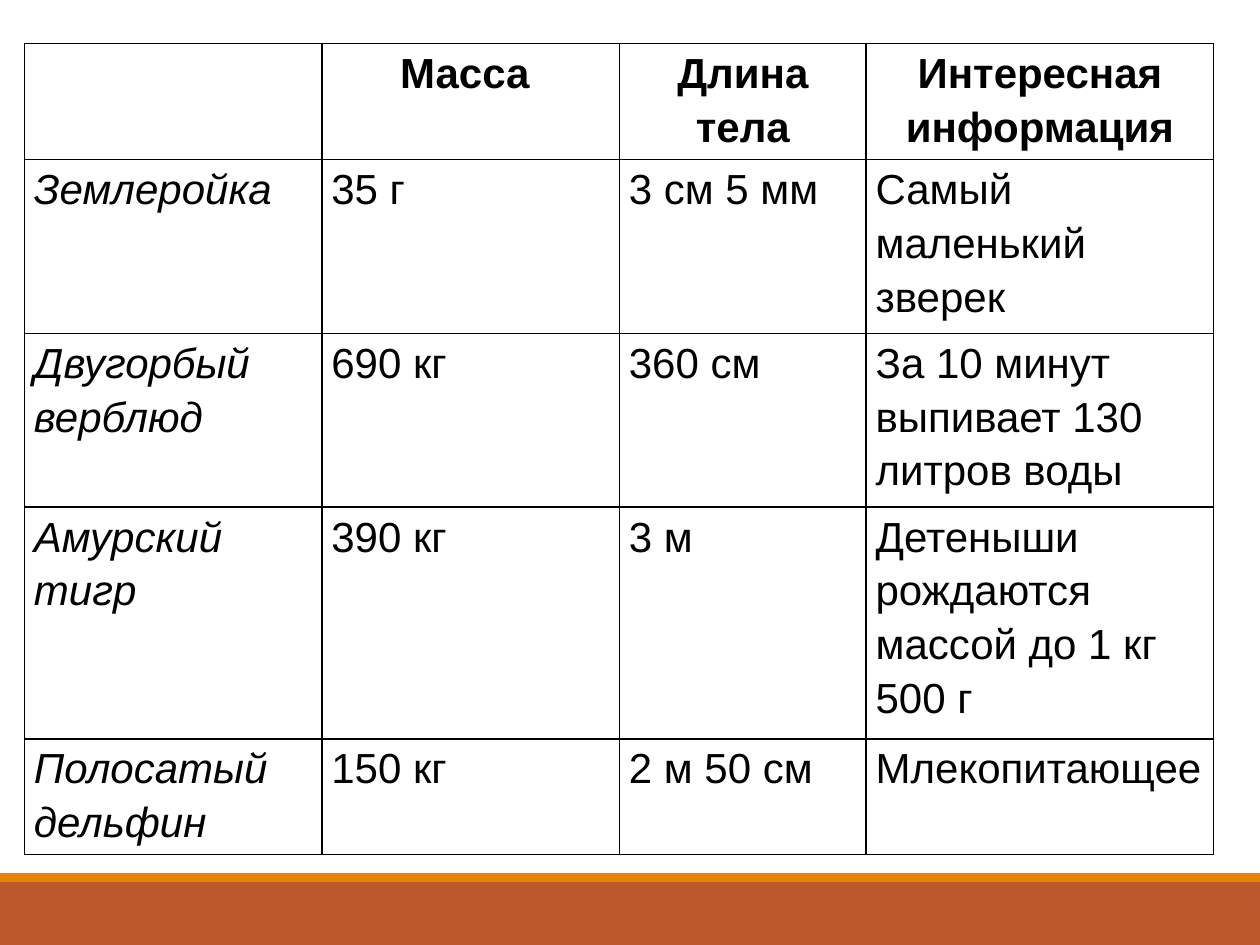
import pptx
import pptx.dml.color
import pptx.enum.shapes
import pptx.enum.text
import pptx.oxml
import pptx.oxml.ns
import pptx.util
from pptx.util import Pt

ALIGN = pptx.enum.text.PP_ALIGN

# Content
HEADER = ["", "Масса ", "Длина тела", "Интересная информация"]
ANIMALS = [
    ["Землеройка", "35 г", "3 см 5 мм", "Самый маленький зверек"],
    ["Двугорбый верблюд", "690 кг", "360 см", "За 10 минут выпивает 130 литров воды"],
    ["Амурский тигр", "390 кг", "3 м", "Детеныши рождаются массой до 1 кг 500 г"],
    ["Полосатый дельфин", "150 кг", "2 м 50 см", "Млекопитающее"],
]
COLUMN_WIDTHS = [170, 170, 141, 198.5]
COLUMN_ALIGN = [ALIGN.LEFT, ALIGN.JUSTIFY, ALIGN.JUSTIFY, ALIGN.LEFT]
ROW_LINES = [2, 3, 3, 4, 2]
LINE_HEIGHT = 33.1
TABLE_LEFT, TABLE_TOP = 14, 25
BANDS = [(504, 36, "BD582C"), (499, 5, "E48312")]  # top, height, colour
BLACK = "000000"


def rgb(colour):
    return pptx.dml.color.RGBColor.from_string(colour)


def add_borders(cell):
    properties = cell._tc.get_or_add_tcPr()
    for side in "LRTB":
        properties.append(pptx.oxml.parse_xml(
            f'<a:ln{side} {pptx.oxml.ns.nsdecls("a")} w="{Pt(1)}"><a:solidFill>'
            f'<a:srgbClr val="{BLACK}"/></a:solidFill></a:ln{side}>'))


def fill_cell(cell, text, row, column):
    add_borders(cell)
    cell.fill.background()
    cell.margin_left = cell.margin_right = Pt(5.4)
    cell.margin_top = cell.margin_bottom = Pt(0)
    cell.text = text
    paragraph = cell.text_frame.paragraphs[0]
    paragraph.alignment = ALIGN.CENTER if row == 0 else COLUMN_ALIGN[column]
    paragraph.line_spacing = 1.15
    font = paragraph.font
    font.name, font.size = "Arial", Pt(24)
    font.bold = row == 0
    font.italic = row > 0 and column == 0
    font.color.rgb = rgb(BLACK)


presentation = pptx.Presentation()
presentation.slide_width, presentation.slide_height = Pt(720), Pt(540)
slide = presentation.slides.add_slide(presentation.slide_layouts[6])

# Bottom bands
for top, height, colour in BANDS:
    band = slide.shapes.add_shape(
        pptx.enum.shapes.MSO_SHAPE.RECTANGLE, Pt(0), Pt(top), Pt(720), Pt(height))
    band.shadow.inherit = False
    band.fill.solid()
    band.fill.fore_color.rgb = rgb(colour)
    band.line.fill.background()

# Animal table
rows = [HEADER] + ANIMALS
animals = slide.shapes.add_table(
    len(rows), len(HEADER), Pt(TABLE_LEFT), Pt(TABLE_TOP),
    Pt(sum(COLUMN_WIDTHS)), Pt(sum(ROW_LINES) * LINE_HEIGHT)).table
animals.first_row = animals.horz_banding = False
for column, width in zip(animals.columns, COLUMN_WIDTHS):
    column.width = Pt(width)
for r, (texts, lines) in enumerate(zip(rows, ROW_LINES)):
    animals.rows[r].height = Pt(lines * LINE_HEIGHT)
    for c, text in enumerate(texts):
        fill_cell(animals.cell(r, c), text, r, c)

presentation.save("out.pptx")
